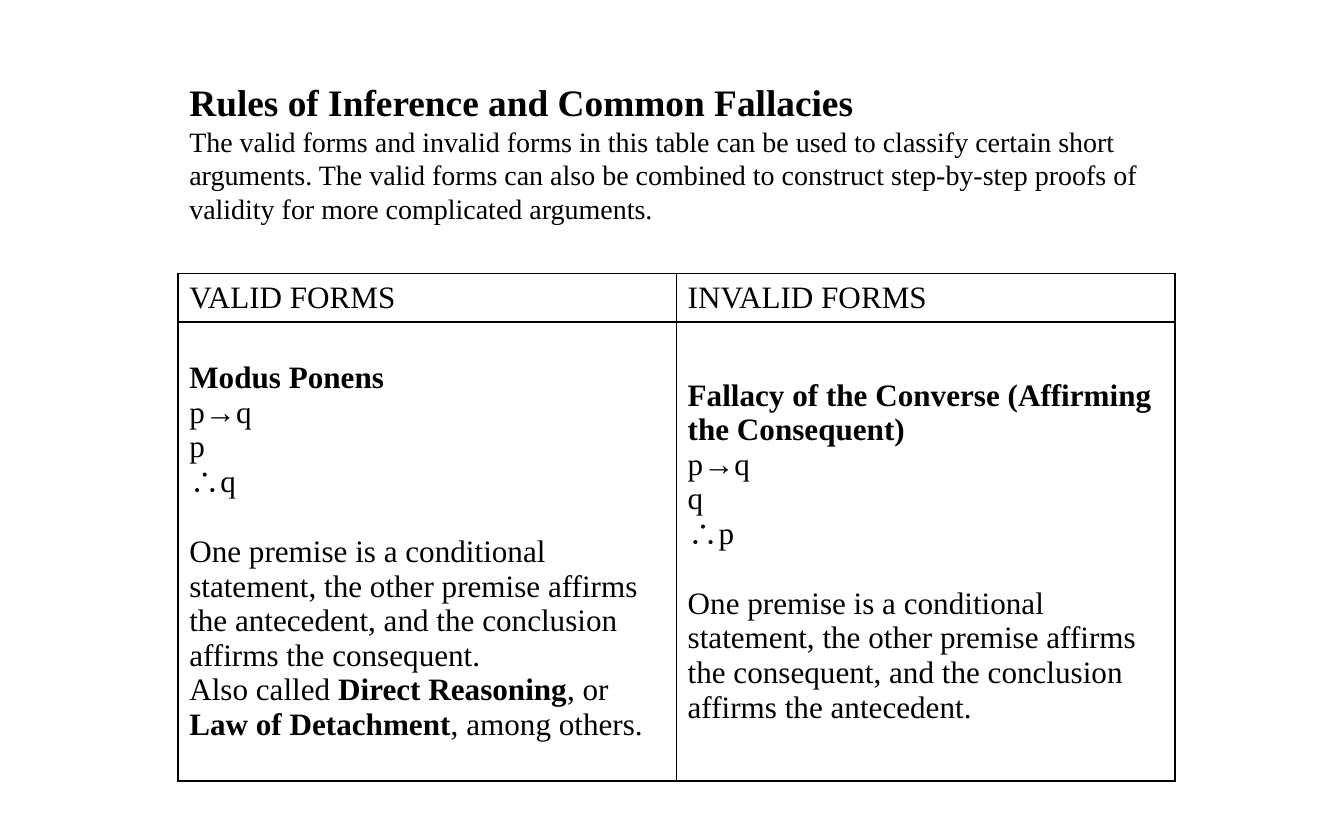
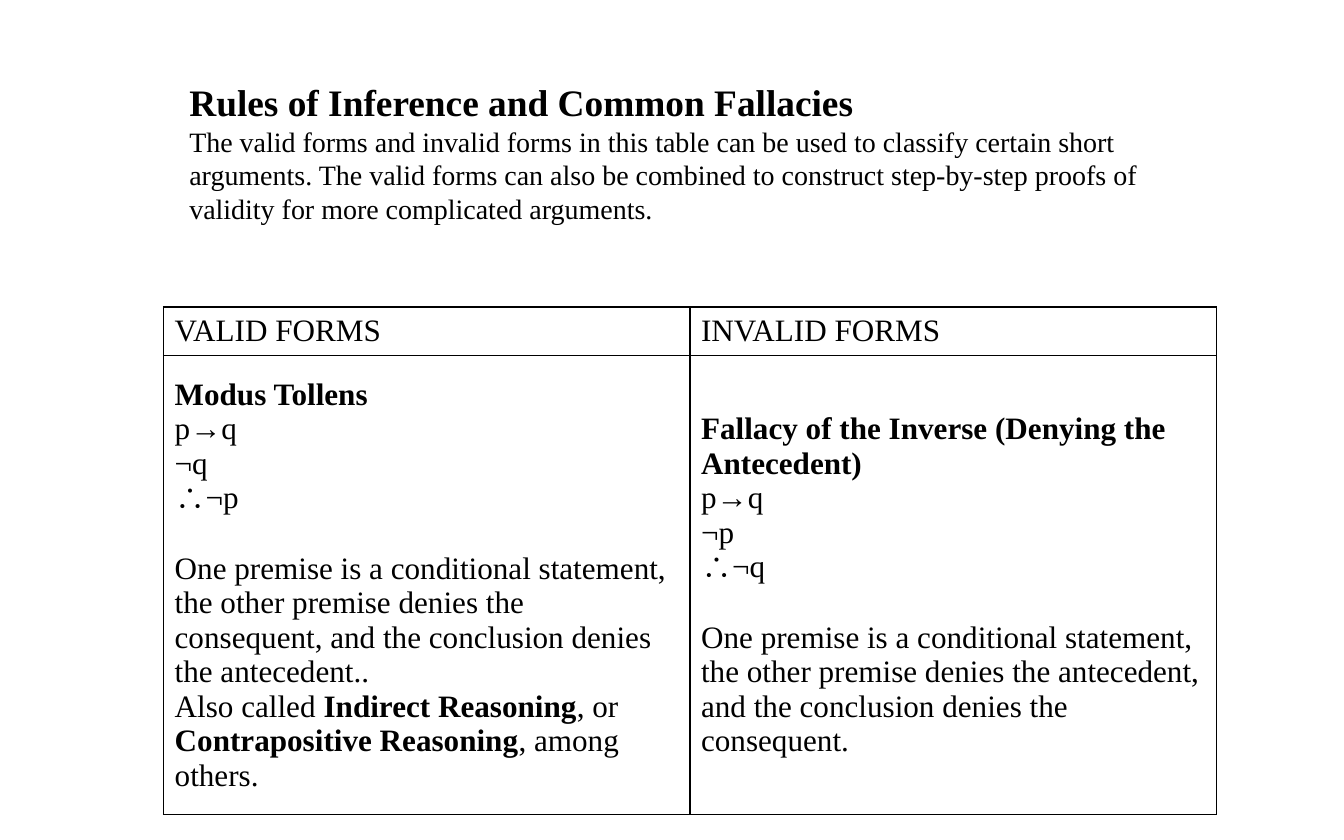
from lxml import etree
from pptx import Presentation
from pptx.dml.color import RGBColor
from pptx.enum.text import MSO_ANCHOR, MSO_AUTO_SIZE, PP_ALIGN
from pptx.oxml.ns import qn
from pptx.util import Inches, Pt

TITLE = "Rules of Inference and Common Fallacies"
INTRO = (
    "The valid forms and invalid forms in this table can be used to classify "
    "certain short arguments. The valid forms can also be combined to construct "
    "step-by-step proofs of validity for more complicated arguments."
)
HEADERS = ("VALID FORMS", "INVALID FORMS")
RULES = [
    {
        "place": (1.59, 2.44, 8.9),
        "valid": {
            "name": "Modus Ponens",
            "steps": ["p→q", "p", "∴q"],
            "meaning": "One premise is a conditional statement, the other premise "
                       "affirms the antecedent, and the conclusion affirms the consequent.",
            "aliases": ("Direct Reasoning", "Law of Detachment"),
        },
        "invalid": {
            "name": "Fallacy of the Converse (Affirming the Consequent)",
            "steps": ["p→q", "q", "∴p"],
            "meaning": "One premise is a conditional statement, the other premise "
                       "affirms the consequent, and the conclusion affirms the antecedent.",
        },
    },
    {
        "place": (1.46, 2.74, 9.4),
        "valid": {
            "name": "Modus Tollens",
            "steps": ["p→q", "¬q", "∴¬p"],
            "meaning": "One premise is a conditional statement, the other premise "
                       "denies the consequent, and the conclusion denies the antecedent..",
            "aliases": ("Indirect Reasoning", "Contrapositive Reasoning"),
        },
        "invalid": {
            "name": "Fallacy of the Inverse (Denying the Antecedent)",
            "steps": ["p→q", "¬p", "∴¬q"],
            "meaning": "One premise is a conditional statement, the other premise "
                       "denies the antecedent, and the conclusion denies the consequent.",
        },
    },
]

FONT = "Times New Roman"
BLACK = RGBColor(0, 0, 0)
TOP, MIDDLE = MSO_ANCHOR.TOP, MSO_ANCHOR.MIDDLE
LEFT = PP_ALIGN.LEFT
GROW = MSO_AUTO_SIZE.SHAPE_TO_FIT_TEXT
TITLE_ONLY = 5
TABLE_SIZE = 20
LINE_GAP = 23
ROW_HEIGHTS = (0.43, 4.1)


def write_lines(frame, lines):
    for index, (spans, size, gap) in enumerate(lines):
        para = frame.paragraphs[0] if index == 0 else frame.add_paragraph()
        para.alignment = LEFT
        para.space_before = Pt(gap)
        for text, bold in spans:
            span = para.add_run()
            span.text = text
            span.font.name = FONT
            span.font.size = Pt(size)
            span.font.bold = bold
            span.font.color.rgb = BLACK


def form_lines(form):
    lines = [([(form["name"], True)], TABLE_SIZE, 0)]
    lines += [([(step, False)], TABLE_SIZE, 0) for step in form["steps"]]
    lines.append(([(form["meaning"], False)], TABLE_SIZE, LINE_GAP))
    if "aliases" in form:
        first, second = form["aliases"]
        spans = [("Also called ", False), (first, True), (", or ", False),
                 (second, True), (", among others.", False)]
        lines.append((spans, TABLE_SIZE, 0))
    return lines


def outline_cell(cell):
    properties = cell._tc.get_or_add_tcPr()
    for side in ("a:lnL", "a:lnR", "a:lnT", "a:lnB"):
        line = etree.SubElement(properties, qn(side), w=str(Pt(1)))
        fill = etree.SubElement(line, qn("a:solidFill"))
        etree.SubElement(fill, qn("a:srgbClr"), val=str(BLACK))
    cell.fill.background()


def add_heading(slide):
    box = slide.shapes.title
    box.left, box.top = Inches(1.59), Inches(0.66)
    box.width, box.height = Inches(9.12), Inches(1.41)
    frame = box.text_frame
    frame.word_wrap = True
    frame.auto_size = GROW
    frame.vertical_anchor = TOP
    write_lines(frame, [([(TITLE, True)], 24, 0), ([(INTRO, False)], 18, 0)])


def add_forms_table(slide, rule):
    left, top, width = rule["place"]
    table = slide.shapes.add_table(
        2, 2, Inches(left), Inches(top), Inches(width), Inches(sum(ROW_HEIGHTS))
    ).table
    table.first_row = False
    table.horz_banding = False
    for row, height in zip(table.rows, ROW_HEIGHTS):
        row.height = Inches(height)
    for column, (header, kind) in enumerate(zip(HEADERS, ("valid", "invalid"))):
        header_lines = [([(header, False)], TABLE_SIZE, 0)]
        for row, lines in enumerate((header_lines, form_lines(rule[kind]))):
            cell = table.cell(row, column)
            cell.vertical_anchor = MIDDLE
            write_lines(cell.text_frame, lines)
            outline_cell(cell)


def main():
    deck = Presentation()
    deck.slide_width, deck.slide_height = Inches(12), Inches(7.5)
    for rule in RULES:
        slide = deck.slides.add_slide(deck.slide_layouts[TITLE_ONLY])
        add_heading(slide)
        add_forms_table(slide, rule)
    deck.save("out.pptx")


if __name__ == "__main__":
    main()
